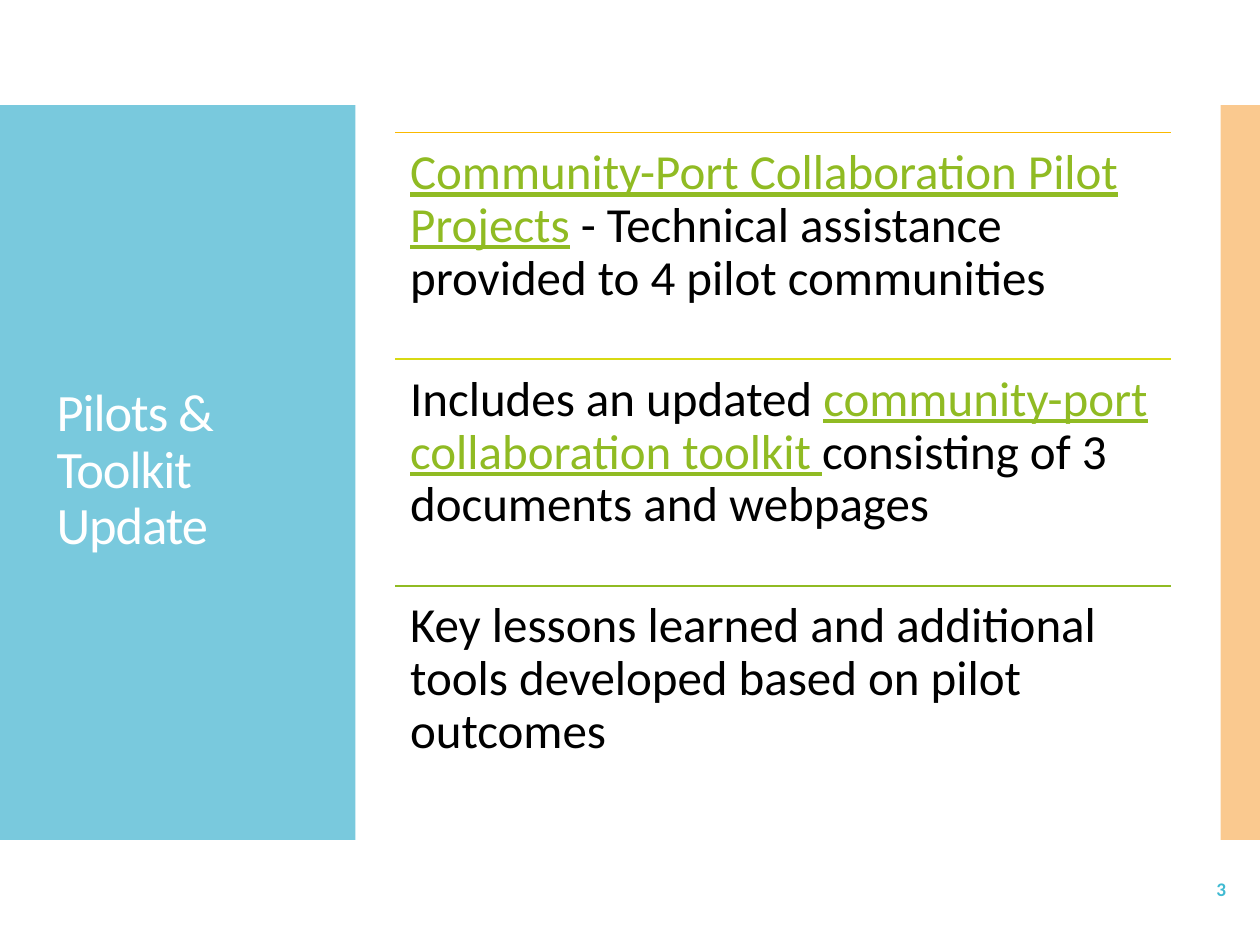
"""Build the Pilots & Toolkit Update slide."""
import pptx
import pptx.dml.color
import pptx.enum.shapes
import pptx.enum.text
import pptx.oxml
import pptx.oxml.ns
import pptx.util

Pt = pptx.util.Pt
ANCHOR = pptx.enum.text.MSO_ANCHOR
ALIGN = pptx.enum.text.PP_ALIGN

COLORS = {
    "panel": "79C9DD", "accent": "F79421", "title": "FFFFFF", "number": "40BAD2",
    "text": "000000", "link": "90BB23",
    "gold": "FAB900", "lime": "D7D913", "green": "90BB23",
}
TITLE = "Pilots & Toolkit Update"
PAGE_NUMBER = "3"
SECTIONS = [
    ("gold", [("Community-Port Collaboration Pilot Projects", "link"),
              (" - Technical assistance provided to 4 pilot communities", "text")]),
    ("lime", [("Includes an updated ", "text"),
              ("community-port collaboration toolkit ", "link"),
              ("consisting of 3 documents and webpages", "text")]),
    ("green", [("Key lessons learned and additional tools developed "
                "based on pilot outcomes", "text")]),
]
BAND_TOP, BAND_HEIGHT = 60, 420
LIST_LEFT, LIST_TOP, LIST_WIDTH, ROW_HEIGHT = 226, 75.6, 443, 129.6


def rgb(name):
    return pptx.dml.color.RGBColor.from_string(COLORS[name])


def add_band(slide, left, width, color, opacity=100):
    band = slide.shapes.add_shape(
        pptx.enum.shapes.MSO_SHAPE.RECTANGLE,
        Pt(left), Pt(BAND_TOP), Pt(width), Pt(BAND_HEIGHT))
    band.shadow.inherit = False
    band.fill.solid()
    band.fill.fore_color.rgb = rgb(color)
    band.line.fill.background()
    if opacity < 100:
        fill_color = band.fill._xPr.find(".//" + pptx.oxml.ns.qn("a:srgbClr"))
        alpha = pptx.oxml.parse_xml(
            f'<a:alpha {pptx.oxml.ns.nsdecls("a")} val="{opacity * 1000}"/>')
        fill_color.append(alpha)


def add_text(slide, box, runs, size, anchor=ANCHOR.TOP, margins=(7.2, 3.6)):
    shape = slide.shapes.add_textbox(*map(Pt, box))
    frame = shape.text_frame
    frame.word_wrap = True
    frame.vertical_anchor = anchor
    frame.margin_left = frame.margin_right = Pt(margins[0])
    frame.margin_top = frame.margin_bottom = Pt(margins[1])
    paragraph = frame.paragraphs[0]
    paragraph.font.name = "Calibri"
    paragraph.font.size = Pt(size)
    for text, color in runs:
        run = paragraph.add_run()
        run.text = text
        run.font.color.rgb = rgb(color)
        if color == "link":
            run.font.underline = True
    return paragraph


def add_rule(slide, top, color):
    rule = slide.shapes.add_connector(
        pptx.enum.shapes.MSO_CONNECTOR.STRAIGHT,
        Pt(LIST_LEFT), Pt(top), Pt(LIST_LEFT + LIST_WIDTH), Pt(top))
    rule.line.color.rgb = rgb(color)
    rule.line.width = Pt(0.85)
    rule._element.spPr.append(
        pptx.oxml.parse_xml(f'<a:effectLst {pptx.oxml.ns.nsdecls("a")}/>'))


def main():
    presentation = pptx.Presentation()
    presentation.slide_width, presentation.slide_height = Pt(720), Pt(540)
    slide = presentation.slides.add_slide(presentation.slide_layouts[6])

    add_band(slide, 0, 203.2, "panel")
    add_band(slide, 697.5, 22.5, "accent", opacity=50)

    title = add_text(slide, (25.2, 93.6, 169.2, 351.4), [(TITLE, "title")], 30,
                     ANCHOR.MIDDLE)
    title.line_spacing = 0.9
    title.runs[0].font._element.set("spc", "-60")

    number = add_text(slide, (620, 494, 87.8, 28), [(PAGE_NUMBER, "number")], 11,
                      ANCHOR.MIDDLE)
    number.alignment = ALIGN.RIGHT
    number.space_after = Pt(5.8)
    number.font.bold = True

    for index, (color, runs) in enumerate(SECTIONS):
        top = LIST_TOP + index * ROW_HEIGHT
        add_rule(slide, top, color)
        section = add_text(slide, (LIST_LEFT, top, LIST_WIDTH, ROW_HEIGHT), runs, 28,
                           margins=(8.4, 8.4))
        section.line_spacing = 0.9

    presentation.save("out.pptx")


if __name__ == "__main__":
    main()
